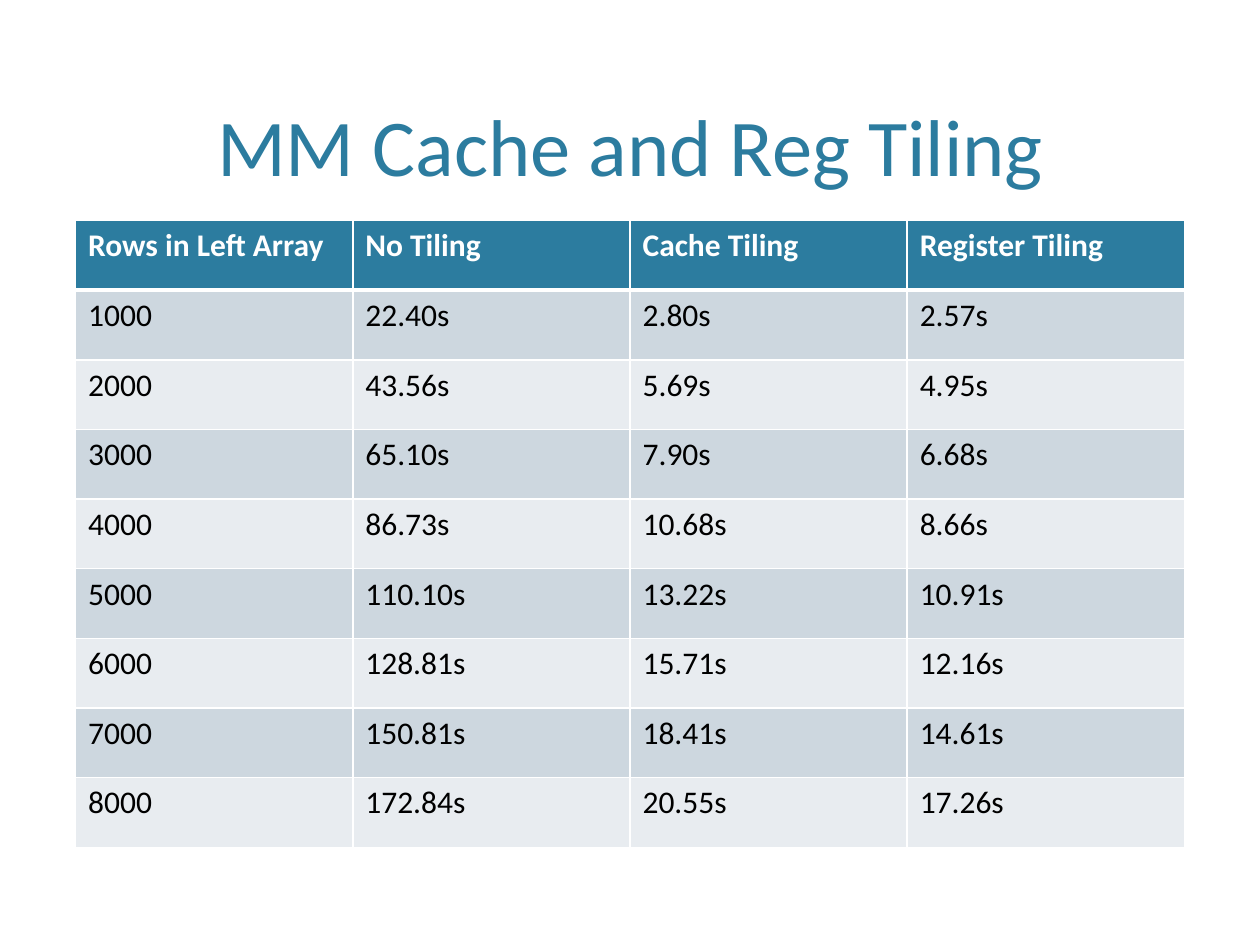
from lxml.etree import SubElement
from pptx import Presentation
from pptx.dml.color import RGBColor
from pptx.enum.text import MSO_ANCHOR, PP_ALIGN
from pptx.oxml.ns import qn
from pptx.util import Pt

TEAL = RGBColor(0x2C, 0x7C, 0x9F)
BLUE = RGBColor(0xCD, 0xD7, 0xDF)
PALE = RGBColor(0xE8, 0xEC, 0xF0)
WHITE = RGBColor(0xFF, 0xFF, 0xFF)
BLACK = RGBColor(0x00, 0x00, 0x00)

LEFT, WIDTH = 43.2, 633.6
ROW_H = 39.8

ROWS = [
    ("Rows in Left Array", "No Tiling", "Cache Tiling", "Register Tiling"),
    ("1000", "22.40s", "2.80s", "2.57s"),
    ("2000", "43.56s", "5.69s", "4.95s"),
    ("3000", "65.10s", "7.90s", "6.68s"),
    ("4000", "86.73s", "10.68s", "8.66s"),
    ("5000", "110.10s", "13.22s", "10.91s"),
    ("6000", "128.81s", "15.71s", "12.16s"),
    ("7000", "150.81s", "18.41s", "14.61s"),
    ("8000", "172.84s", "20.55s", "17.26s"),
]


def add_text(frame, text, size, color, bold=False):
    run = frame.paragraphs[0].add_run()
    run.text = text
    run.font.name = "Calibri"
    run.font.size = Pt(size)
    run.font.bold = bold
    run.font.color.rgb = color


def add_edge(cell, side, width):
    """Draw a white border; call before the cell is filled, as XML order matters."""
    line = SubElement(cell._tc.get_or_add_tcPr(), qn("a:ln" + side), w=str(Pt(width)))
    fill = SubElement(line, qn("a:solidFill"))
    SubElement(fill, qn("a:srgbClr"), val=str(WHITE))


deck = Presentation()
deck.slide_width, deck.slide_height = Pt(720), Pt(540)
slide = deck.slides.add_slide(deck.slide_layouts[6])

title = slide.shapes.add_textbox(Pt(LEFT), Pt(8.6), Pt(WIDTH), Pt(105.2)).text_frame
title.word_wrap = True
title.vertical_anchor = MSO_ANCHOR.BOTTOM
title.paragraphs[0].alignment = PP_ALIGN.CENTER
add_text(title, "MM Cache and Reg Tiling", 46, TEAL)

table = slide.shapes.add_table(
    len(ROWS), len(ROWS[0]), Pt(LEFT), Pt(126), Pt(WIDTH), Pt(ROW_H * len(ROWS))
).table
for r, values in enumerate(ROWS):
    table.rows[r].height = Pt(ROW_H)
    head = r == 0
    back = TEAL if head else BLUE if r % 2 else PALE
    for c, value in enumerate(values):
        cell = table.cell(r, c)
        add_edge(cell, "L", 1)
        add_edge(cell, "R", 1)
        add_edge(cell, "T", 3 if r == 1 else 1)
        add_edge(cell, "B", 3 if head else 1)
        cell.fill.solid()
        cell.fill.fore_color.rgb = back
        add_text(cell.text_frame, value, 18, WHITE if head else BLACK, head)

deck.save("out.pptx")
